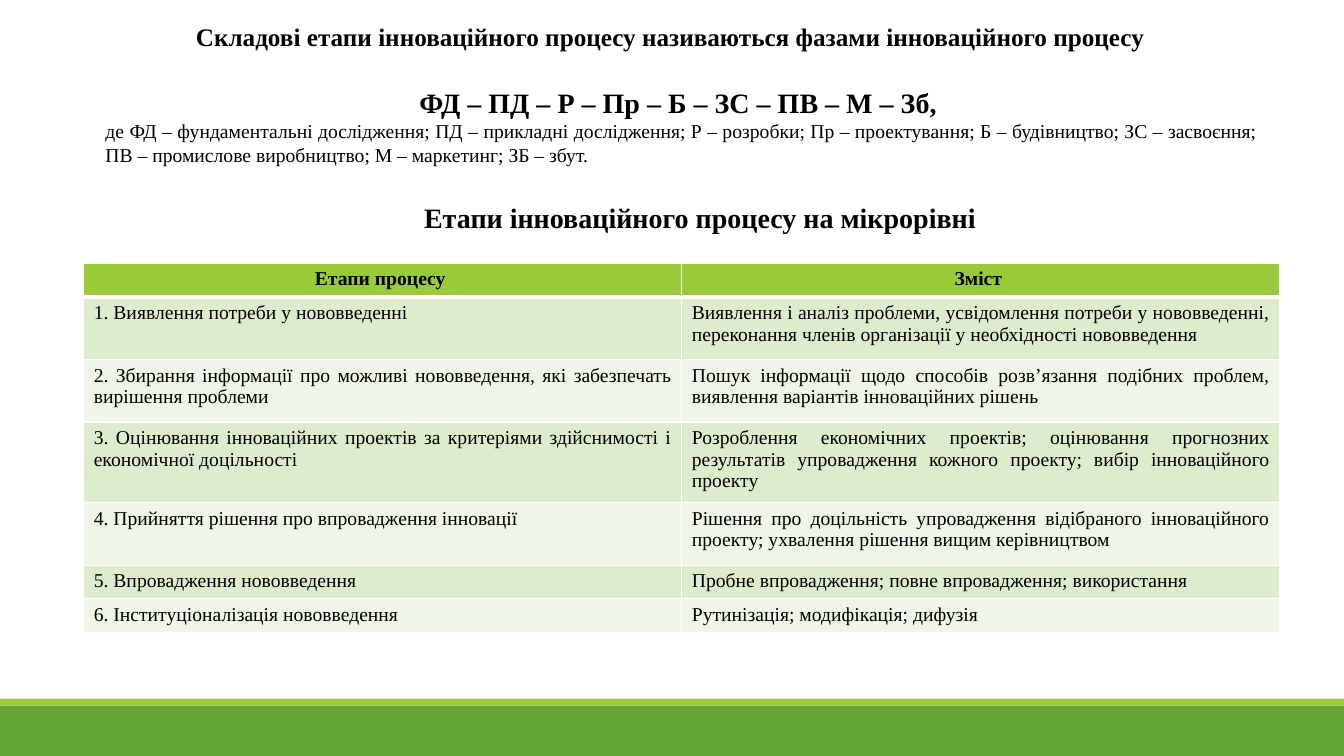
"""Builds a slide on the phases of the innovation process."""
from lxml import etree
from pptx import Presentation
from pptx.dml.color import RGBColor
from pptx.enum.shapes import MSO_SHAPE
from pptx.enum.text import MSO_AUTO_SIZE, PP_ALIGN
from pptx.oxml.ns import qn
from pptx.util import Pt

RECT = MSO_SHAPE.RECTANGLE
LEFT, MID, JUST = PP_ALIGN.LEFT, PP_ALIGN.CENTER, PP_ALIGN.JUSTIFY
GROW = MSO_AUTO_SIZE.SHAPE_TO_FIT_TEXT
LIME, GREEN, WHITE, BLACK = "99CB38", "63A537", "FFFFFF", "000000"
BANDS = ["DEECCE", "EFF6E8"]


def paint(fill, color):
    fill.solid()
    fill.fore_color.rgb = RGBColor.from_string(color)


def write(par, text, size, bold, align):
    par.alignment = align
    run = par.add_run()
    run.text = text
    run.font.name = "Times New Roman"
    run.font.size = Pt(size)
    run.font.bold = bold
    run.font.color.rgb = RGBColor.from_string(BLACK)


deck = Presentation()
deck.slide_width, deck.slide_height = Pt(960), Pt(540)
slide = deck.slides.add_slide(deck.slide_layouts[6])
shapes = slide.shapes

for top, height, color in [(504, 36, GREEN), (499, 5, LIME)]:
    bar = shapes.add_shape(RECT, 0, Pt(top), Pt(960), Pt(height))
    bar.shadow.inherit = False
    paint(bar.fill, color)
    bar.line.fill.background()

boxes = [
    (88.5, 11.5, 780.5, 29, True, [
        ("Складові етапи інноваційного процесу називаються фазами інноваційного процесу", 18, True, MID)]),
    (68.2, 57.5, 837.5, 65.5, True, [
        ("ФД – ПД – Р – Пр – Б – ЗС – ПВ – М – Зб, ", 20, True, MID),
        ("де ФД – фундаментальні дослідження; ПД – прикладні дослідження; Р – розробки; "
         "Пр – проектування; Б – будівництво; ЗС – засвоєння; ПВ – промислове виробництво; "
         "М – маркетинг; ЗБ – збут.", 14, False, JUST)]),
    (295.8, 139.7, 411, 31.5, False, [
        ("Етапи інноваційного процесу на мікрорівні", 20, True, LEFT)]),
]
for left, top, width, height, wrap, lines in boxes:
    frame = shapes.add_textbox(Pt(left), Pt(top), Pt(width), Pt(height)).text_frame
    frame.word_wrap = wrap
    frame.auto_size = GROW
    for i, line in enumerate(lines):
        par = frame.add_paragraph() if i else frame.paragraphs[0]
        write(par, *line)

rows = [
    (23.4, "Етапи процесу ", "Зміст "),
    (44.6, "1. Виявлення потреби у нововведенні",
     "Виявлення і аналіз проблеми, усвідомлення потреби у нововведенні, "
     "переконання членів організації у необхідності нововведення"),
    (44.6, "2. Збирання інформації про можливі нововведення, які забезпечать вирішення проблеми",
     "Пошук інформації щодо способів розв’язання подібних проблем, "
     "виявлення варіантів інноваційних рішень"),
    (56, "3. Оцінювання інноваційних проектів за критеріями здійснимості і економічної доцільності",
     "Розроблення економічних проектів; оцінювання прогнозних результатів "
     "упровадження кожного проекту; вибір інноваційного проекту"),
    (44.6, "4. Прийняття рішення про впровадження інновації",
     "Рішення про доцільність упровадження відібраного інноваційного проекту; "
     "ухвалення рішення вищим керівництвом"),
    (24, "5. Впровадження нововведення", "Пробне впровадження; повне впровадження; використання"),
    (23.4, "6. Інституціоналізація нововведення", "Рутинізація; модифікація; дифузія"),
]
total = sum(row[0] for row in rows)
table = shapes.add_table(len(rows), 2, Pt(59.8), Pt(188.2), Pt(854.4), Pt(total)).table
for r, (height, *texts) in enumerate(rows):
    table.rows[r].height = Pt(height)
    head = r == 0
    for c, text in enumerate(texts):
        cell = table.cell(r, c)
        write(cell.text_frame.paragraphs[0], text, 14, head, MID if head else JUST)
        props = cell._tc.get_or_add_tcPr()
        for side in "LRTB":
            thick = (r, side) in [(0, "B"), (1, "T")]
            edge = etree.SubElement(props, qn(f"a:ln{side}"), w=str(Pt(3 if thick else 1)))
            solid = etree.SubElement(edge, qn("a:solidFill"))
            etree.SubElement(solid, qn("a:srgbClr"), val=WHITE)
        paint(cell.fill, LIME if head else BANDS[(r - 1) % 2])

deck.save("out.pptx")
